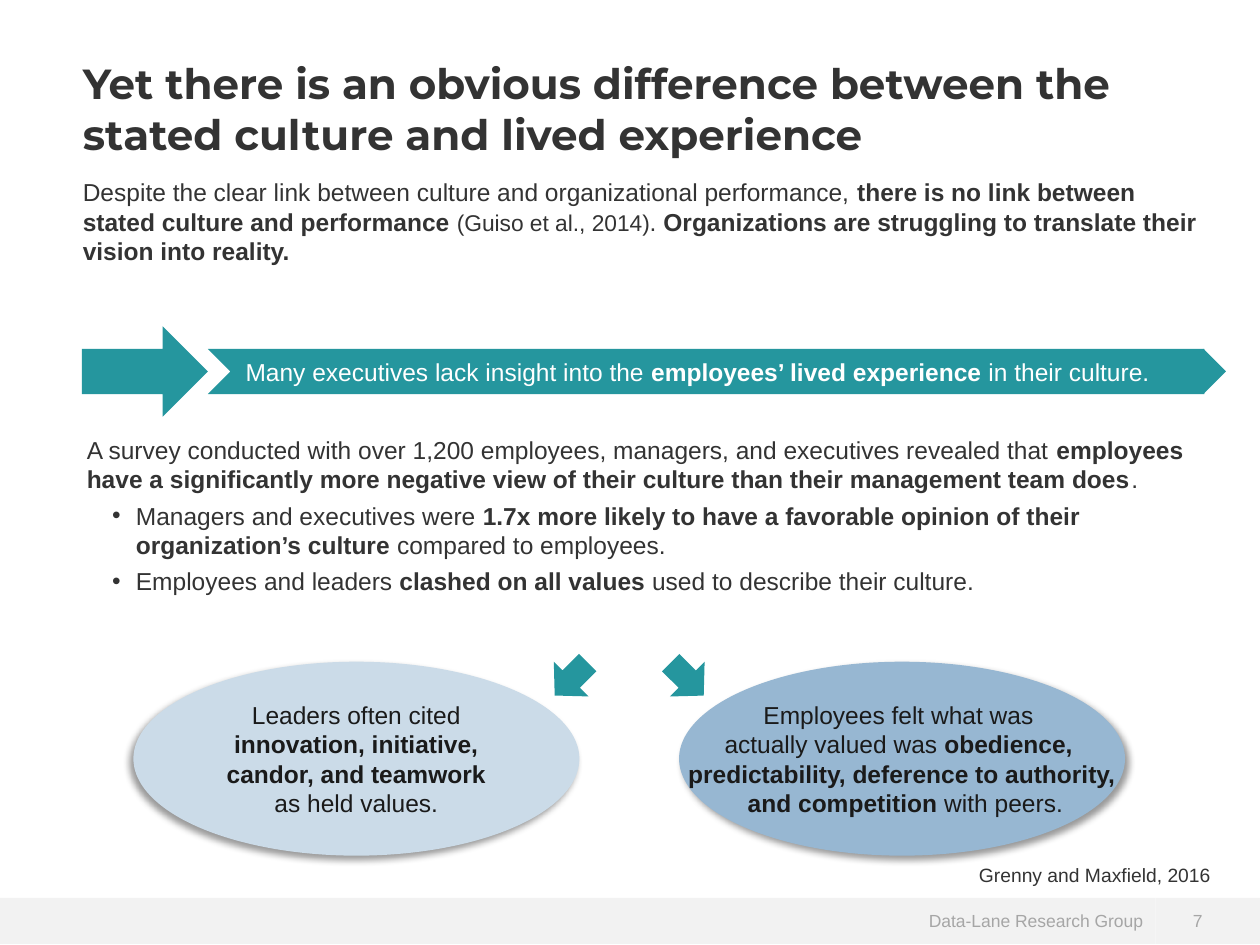
from dataclasses import dataclass

from lxml import etree
from pptx import Presentation
from pptx.dml.color import RGBColor
from pptx.enum.shapes import MSO_SHAPE
from pptx.enum.text import MSO_ANCHOR, PP_ALIGN
from pptx.oxml.ns import qn
from pptx.util import Cm, Pt

RECT = MSO_SHAPE.RECTANGLE
OVAL = MSO_SHAPE.OVAL
WEDGE = MSO_SHAPE.ISOSCELES_TRIANGLE
DOWN = MSO_SHAPE.DOWN_ARROW
LEFT, MID, RIGHT = PP_ALIGN.LEFT, PP_ALIGN.CENTER, PP_ALIGN.RIGHT
TOP, CENTER = MSO_ANCHOR.TOP, MSO_ANCHOR.MIDDLE


@dataclass(frozen=True)
class Theme:
    ink: str = "333333"
    dark: str = "1A1A1A"
    white: str = "FFFFFF"
    gray: str = "A6A6A6"
    strip: str = "F2F2F2"
    teal: str = "25969E"
    pale: str = "CBDBE8"
    blue: str = "97B7D2"
    black: str = "000000"
    font: str = "Arial"
    head: str = "Montserrat"
    title: int = 24
    body: int = 14
    cite: int = 13
    note: int = 11
    foot: int = 10


THEME = Theme()


def write(frame, text, size=THEME.body, color=THEME.ink, font=THEME.font,
          align=LEFT, anchor=TOP, indent=0, after=0, wrap=True):
    """Lines split paragraphs, ** toggles bold, ~ toggles citation size."""
    frame.word_wrap = wrap
    frame.vertical_anchor = anchor
    for row, line in enumerate(text.split("\n")):
        para = frame.add_paragraph() if row else frame.paragraphs[0]
        para.alignment = align
        para.space_after = Pt(after)
        props = para._p.get_or_add_pPr()
        if line.startswith("• "):
            line = line[2:]
            props.set("marL", str(Cm(0.99)))
            props.set("indent", str(Cm(-0.48)))
            etree.SubElement(props, qn("a:buFont"), typeface=THEME.font)
            etree.SubElement(props, qn("a:buChar"), char="•")
        elif indent:
            props.set("marL", str(Cm(indent)))
        for i, part in enumerate(line.split("**")):
            for j, piece in enumerate(part.split("~")):
                if piece:
                    run = para.add_run()
                    run.text = piece
                    run.font.name = font
                    run.font.size = Pt(THEME.cite if j % 2 else size)
                    run.font.bold = i % 2 == 1
                    run.font.color.rgb = RGBColor.from_string(color)


class Board:
    def __init__(self, slide, theme):
        self.slide = slide
        self.theme = theme

    def paint(self, shape, fill):
        shape.shadow.inherit = False
        shape.fill.solid()
        shape.fill.fore_color.rgb = RGBColor.from_string(fill)
        shape.line.fill.background()
        return shape

    def label(self, box, text, **style):
        area = self.slide.shapes.add_textbox(*map(Cm, box))
        write(area.text_frame, text, **style)

    def shape(self, kind, box, fill, turn=0):
        item = self.slide.shapes.add_shape(kind, *map(Cm, box))
        item.rotation = turn
        return self.paint(item, fill)

    def outline(self, points, fill):
        start, *rest = [(Cm(x), Cm(y)) for x, y in points]
        pen = self.slide.shapes.build_freeform(*start)
        pen.add_line_segments(rest, close=True)
        return self.paint(pen.convert_to_shape(), fill)

    def bubble(self, box, fill, angle, text, wrap):
        item = self.shape(OVAL, box, fill)
        effects = item._element.spPr.find(qn("a:effectLst"))
        shade = etree.SubElement(
            effects, qn("a:outerShdw"), blurRad=str(Pt(4)), dist=str(Pt(3)),
            dir=str(angle * 60000), algn="ctr", rotWithShape="0")
        tint = etree.SubElement(shade, qn("a:srgbClr"), val=self.theme.black)
        etree.SubElement(tint, qn("a:alpha"), val="40000")
        write(item.text_frame, text, color=self.theme.dark, align=MID,
              anchor=CENTER, wrap=wrap)


def footer(board):
    look = dict(size=THEME.foot, color=THEME.gray, anchor=CENTER)
    group = board.shape(RECT, (0, 18.1, 23.29, 0.93), THEME.strip)
    write(group.text_frame, "Data-Lane Research Group", align=RIGHT, **look)
    page = board.shape(RECT, (23.29, 18.1, 2.11, 0.93), THEME.strip)
    write(page.text_frame, "7", indent=0.51, **look)


def banner(board):
    left, tip, end = 1.65, 4.19, 24.28
    axis, half, neck = 7.49, 0.455, 3.28
    top, base = axis - half, axis + half
    board.outline(
        [(neck, axis - 2 * half), (tip, axis), (neck, axis + 2 * half),
         (neck, base), (left, base), (left, top), (neck, top)], THEME.teal)
    band = board.outline(
        [(tip, top), (end, top), (end, base), (tip, base),
         (tip + half, axis)], THEME.teal)
    write(band.text_frame,
          "Many executives lack insight into the "
          "**employees’ lived experience **in their culture.",
          color=THEME.white, anchor=CENTER, indent=0.51)
    board.shape(WEDGE, (24.03, 7.26, 2 * half, half), THEME.teal, 90)


def views(board):
    wide, high, top = 8.99, 3.91, 13.34
    board.bubble(
        (2.69, top, wide, high), THEME.pale, 135,
        "Leaders often cited **innovation, initiative, candor, "
        "and teamwork **as held values.", True)
    board.bubble(
        (13.69, top, wide, high), THEME.blue, 45,
        "Employees felt what was \n"
        "actually valued was **obedience, **\n"
        "**predictability, deference to authority,**\n"
        "** and competition** with peers.", False)
    for left, turn in ((11.02, 45), (13.36, 315)):
        board.shape(DOWN, (left, 13.22, 0.99, 0.94), THEME.teal, turn)


def main():
    deck = Presentation()
    deck.slide_width, deck.slide_height = Cm(25.4), Cm(19.05)
    board = Board(deck.slides.add_slide(deck.slide_layouts[6]), THEME)
    footer(board)
    board.label(
        (1.42, 1.04, 23.24, 2.39),
        "**Yet there is an obvious difference between the stated culture "
        "and lived experience**", size=THEME.title, font=THEME.head)
    board.label(
        (1.5, 8.64, 22.99, 3.53),
        "A survey conducted with over 1,200 employees, managers, and "
        "executives revealed that **employees have a significantly more "
        "negative view of their culture than their management team does**.\n"
        "• Managers and executives were **1.7x more likely to have a "
        "favorable opinion of their organization’s culture** compared to "
        "employees.\n"
        "• Employees and leaders **clashed on all values** used to describe "
        "their culture.", after=4)
    board.label(
        (1.42, 3.45, 23.24, 2.06),
        "Despite the clear link between culture and organizational "
        "performance, **there is no link between stated culture and "
        "performance **~(Guiso et al., 2014)~. **Organizations are "
        "struggling to translate their vision into reality.**")
    banner(board)
    views(board)
    board.label((18.11, 17.27, 6.55, 0.74), "Grenny and Maxfield, 2016",
                size=THEME.note, align=RIGHT)
    deck.save("out.pptx")


if __name__ == "__main__":
    main()
